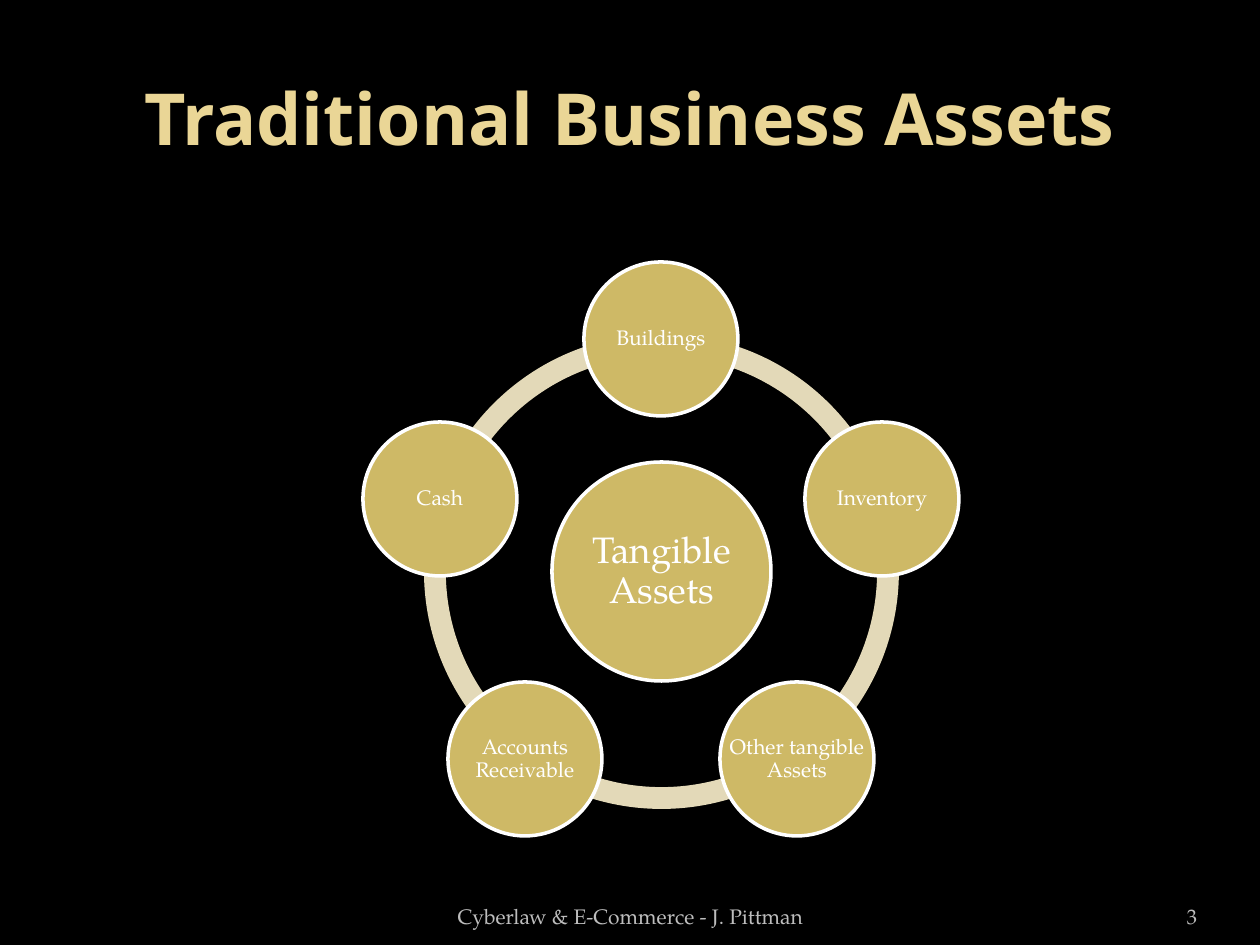
from math import cos, radians, sin

from pptx import Presentation
from pptx.dml.color import RGBColor
from pptx.enum.shapes import MSO_SHAPE
from pptx.enum.text import MSO_ANCHOR, PP_ALIGN
from pptx.util import Emu, Pt

PX = 914400 // 126
COLORS = {
    "background": "000000",
    "title": "EAD696",
    "ring": "E3D9B8",
    "circle": "CEB966",
    "white": "FFFFFF",
    "footer": "BDBDBD",
}
HEADING, BODY = "Open Sans", "TeX Gyre Pagella"
CENTER_X, CENTER_Y = 661, 571
ORBIT = 232
ASSETS = ["Buildings", "Inventory", "Other tangible Assets", "Accounts Receivable", "Cash"]


def px(n):
    return Emu(n * PX)


def rgb(name):
    return RGBColor.from_string(COLORS[name])


class SlideBuilder:
    def __init__(self, slide):
        self.slide = slide
        fill = slide.background.fill
        fill.solid()
        fill.fore_color.rgb = rgb("background")

    def text(self, box, text, size, color, font=BODY, bold=False, align=PP_ALIGN.CENTER,
             anchor=MSO_ANCHOR.MIDDLE, inset=(13, 6), spacing=1.0):
        tf = self.slide.shapes.add_textbox(*map(px, box)).text_frame
        tf.word_wrap = True
        tf.vertical_anchor = anchor
        tf.margin_left = tf.margin_right = px(inset[0])
        tf.margin_top = tf.margin_bottom = px(inset[1])
        p = tf.paragraphs[0]
        p.text = text
        p.alignment = align
        p.line_spacing = spacing
        p.font.size = Pt(size)
        p.font.name = font
        p.font.bold = bold
        p.font.color.rgb = rgb(color)

    def shape(self, kind, box, color):
        s = self.slide.shapes.add_shape(kind, *map(px, box))
        s.shadow.inherit = False
        s.fill.solid()
        s.fill.fore_color.rgb = rgb(color)
        s.line.fill.background()
        return s

    def arc(self, box, start, end):
        s = self.shape(MSO_SHAPE.BLOCK_ARC, box, "ring")
        s.adjustments[0] = start % 360 * 0.6
        s.adjustments[1] = end % 360 * 0.6
        s.adjustments[2] = 0.046

    def circle(self, x, y, diameter, text, size, inset):
        box = (x - diameter // 2, y - diameter // 2, diameter, diameter)
        s = self.shape(MSO_SHAPE.OVAL, box, "circle")
        s.line.color.rgb = rgb("white")
        s.line.width = Pt(2)
        self.text(box, text, size, "white", inset=(inset, inset), spacing=0.9)


def main():
    prs = Presentation()
    prs.slide_width, prs.slide_height = px(1260), px(945)
    b = SlideBuilder(prs.slides.add_slide(prs.slide_layouts[6]))

    b.text((63, 38, 1134, 157), "Traditional Business Assets", 41, "title",
           font=HEADING, bold=True)

    step = 360 // len(ASSETS)
    angles = [i * step - 90 for i in range(len(ASSETS))]
    for angle in angles:
        b.arc((CENTER_X - 237, CENTER_Y - 237, 475, 475), angle, angle + step)
    b.circle(CENTER_X, CENTER_Y, 219, "Tangible Assets", 21, 4)
    for asset, angle in zip(ASSETS, angles):
        x = round(CENTER_X + ORBIT * cos(radians(angle)))
        y = round(CENTER_Y + ORBIT * sin(radians(angle)))
        b.circle(x, y, 154, asset, 12, 2)

    b.text((431, 885, 399, 50), "Cyberlaw & E-Commerce - J. Pittman", 12, "footer",
           anchor=MSO_ANCHOR.BOTTOM)
    b.text((1092, 885, 105, 50), "3", 12, "footer", align=PP_ALIGN.RIGHT,
           anchor=MSO_ANCHOR.BOTTOM, inset=(0, 6))

    prs.save("out.pptx")


if __name__ == "__main__":
    main()
